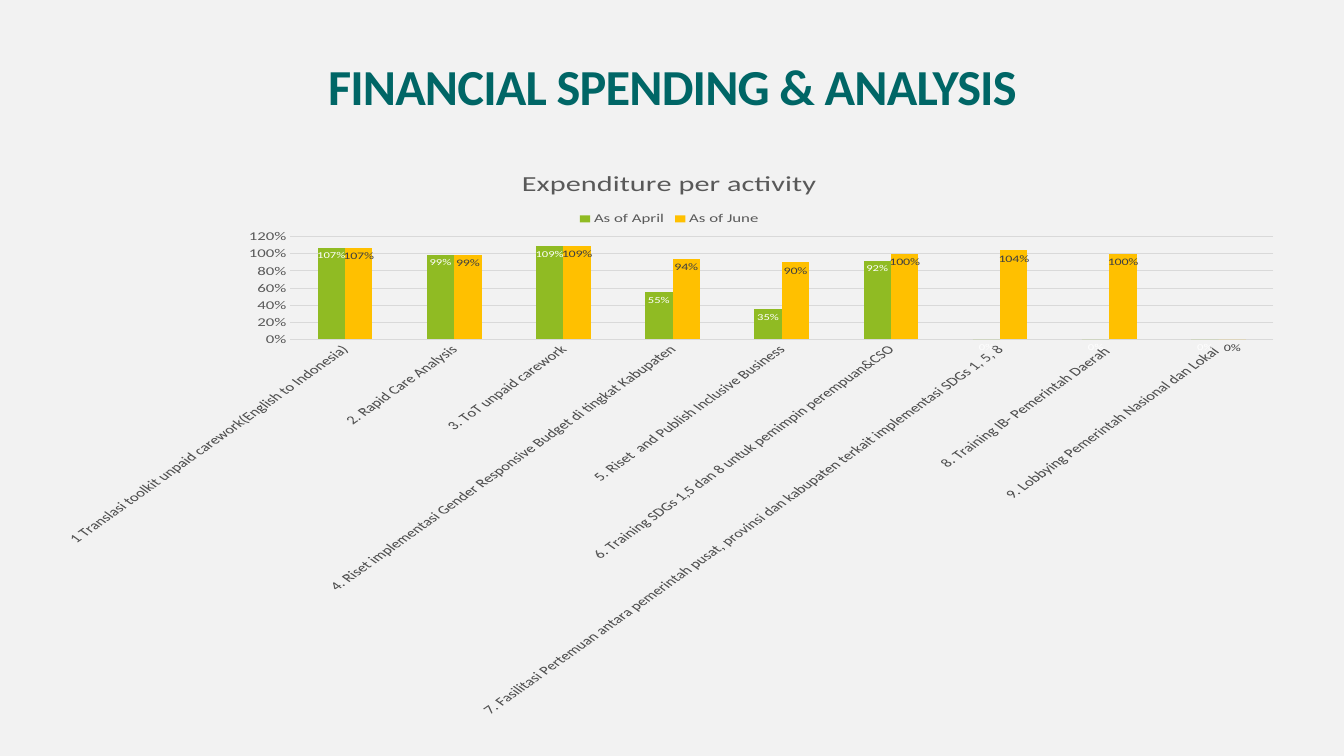
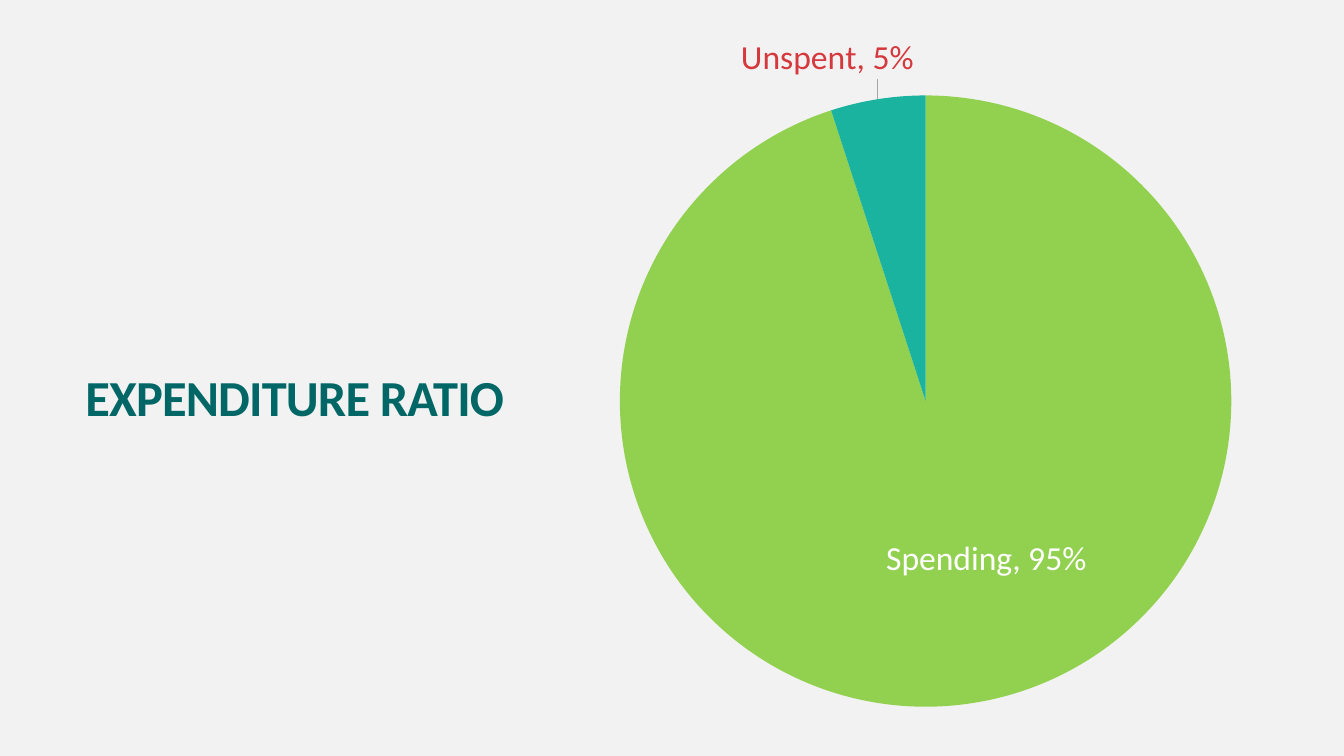
import pptx
import pptx.chart.data
import pptx.dml.color
import pptx.enum.chart
import pptx.enum.text
import pptx.oxml
import pptx.oxml.ns
import pptx.util
from lxml import etree

RGBColor = pptx.dml.color.RGBColor
ChartType = pptx.enum.chart.XL_CHART_TYPE
LabelPlace = pptx.enum.chart.XL_LABEL_POSITION
LegendPlace = pptx.enum.chart.XL_LEGEND_POSITION
TickMark = pptx.enum.chart.XL_TICK_MARK

PALE = RGBColor(0xF2, 0xF2, 0xF2)
TEAL = RGBColor(0x00, 0x66, 0x66)
GREY = RGBColor(0x59, 0x59, 0x59)
DARK = RGBColor(0x40, 0x40, 0x40)
RULE = RGBColor(0xD9, 0xD9, 0xD9)
LEADER = RGBColor(0xA6, 0xA6, 0xA6)
WHITE = RGBColor(0xFF, 0xFF, 0xFF)
BLACK = RGBColor(0x00, 0x00, 0x00)
RED = RGBColor(0xD5, 0x39, 0x3D)
GREEN = RGBColor(0x90, 0xBB, 0x23)
AMBER = RGBColor(0xFF, 0xC0, 0x00)
LIME = RGBColor(0x92, 0xD0, 0x50)
SEA = RGBColor(0x1A, 0xB3, 0x9F)

FONT = "Calibri"
WIDTH, HEIGHT = pptx.util.Inches(13.33), pptx.util.Inches(7.5)
TITLE_HEIGHT = 8.8
TITLE_LAYOUT = 5

ACTIVITIES = [
    "1 Translasi toolkit unpaid carework(English to Indonesia)",
    "2. Rapid Care Analysis",
    "3. ToT unpaid carework",
    "4. Riset implementasi Gender Responsive Budget di tingkat Kabupaten",
    "5. Riset  and Publish Inclusive Business",
    "6. Training SDGs 1,5 dan 8 untuk pemimpin perempuan&CSO",
    "7. Fasilitasi Pertemuan antara pemerintah pusat, provinsi dan kabupaten"
    " terkait implementasi SDGs 1, 5, 8",
    "8. Training IB- Pemerintah Daerah ",
    "9. Lobbying Pemerintah Nasional dan Lokal ",
]
SPENDING = {
    "As of April": [1.07, 0.99, 1.09, 0.55, 0.35, 0.92, 0, 0, 0],
    "As of June": [1.07, 0.99, 1.09, 0.94, 0.9, 1, 1.04, 1, 0],
}
SERIES_STYLES = [(GREEN, WHITE, 9), (AMBER, DARK, 10)]
RATIO = {"Spending": 0.95, "Unspend": 0.05}
SLICES = [
    ("Spending, 95%", LIME, WHITE, LabelPlace.CENTER, {"x": 0.03, "y": 0.01}),
    ("Unspent, 5%", SEA, RED, LabelPlace.OUTSIDE_END, {"x": 0.03, "y": -0.02}),
]
PIE_AREA = {"layoutTarget": "inner", "xMode": "edge", "yMode": "edge",
            "x": 0.24, "y": 0.08, "w": 0.5, "h": 0.84}


def area(left, top, width, height):
    """Turn percentages of the slide into a position and size."""
    shares = zip((left, top, width, height), (WIDTH, HEIGHT) * 2)
    return [round(share * full / 100) for share, full in shares]


def apply_format(target, values):
    """Set each attribute named in a dict of format values."""
    for name, value in values.items():
        setattr(target, name, value)


def style_font(font, size, color, bold=False):
    """Give a font its face, size, weight and colour."""
    apply_format(font, {"name": FONT, "size": pptx.util.Pt(size), "bold": bold})
    font.color.rgb = color


def paint(fill, color):
    """Fill with one solid colour."""
    fill.solid()
    fill.fore_color.rgb = color


def draw_rule(line):
    """Make a thin light line."""
    line.color.rgb = RULE
    line.width = pptx.util.Pt(0.75)


def set_layout(parent, index, values):
    """Place a chart part by hand."""
    name = pptx.oxml.ns.qn
    for old in parent.findall(name("c:layout")):
        parent.remove(old)
    layout = etree.Element(name("c:layout"))
    manual = etree.SubElement(layout, name("c:manualLayout"))
    for key, value in values.items():
        etree.SubElement(manual, name("c:" + key)).set("val", str(value))
    parent.insert(index, layout)


def add_leader_lines(labels):
    """Draw thin grey leaders from the labels to their slices."""
    namespaces = pptx.oxml.ns.nsdecls("c", "a")
    labels.append(pptx.oxml.parse_xml(
        f'<c:leaderLines {namespaces}><c:spPr><a:ln w="9525"><a:solidFill>'
        f'<a:srgbClr val="{LEADER}"/></a:solidFill></a:ln></c:spPr>'
        '</c:leaderLines>'))


def add_page(deck, title, left, top, width):
    """Add a page with its formatted title."""
    page = deck.slides.add_slide(deck.slide_layouts[TITLE_LAYOUT])
    box = page.shapes.title
    position = area(left, top, width, TITLE_HEIGHT)
    apply_format(box, dict(zip(("left", "top", "width", "height"), position)))
    apply_format(box.text_frame, {
        "word_wrap": True,
        "auto_size": pptx.enum.text.MSO_AUTO_SIZE.NONE,
        "vertical_anchor": pptx.enum.text.MSO_ANCHOR.MIDDLE,
    })
    para = box.text_frame.paragraphs[0]
    apply_format(para, {"alignment": pptx.enum.text.PP_ALIGN.CENTER,
                        "line_spacing": 0.9})
    span = para.add_run()
    span.text = title
    style_font(span.font, 36, TEAL, True)
    span.font._element.set("spc", "-60")
    return page


def add_chart(page, kind, categories, series, position):
    """Add a chart in the shared base font."""
    data = pptx.chart.data.CategoryChartData(number_format="0%")
    data.categories = categories
    for name, values in series.items():
        data.add_series(name, values)
    chart = page.shapes.add_chart(kind, *area(*position), data).chart
    style_font(chart.font, 10, BLACK)
    return chart


def style_axes(chart):
    """Format both axes of the column chart."""
    for axis in (chart.category_axis, chart.value_axis):
        apply_format(axis, {"major_tick_mark": TickMark.NONE,
                            "minor_tick_mark": TickMark.NONE})
        style_font(axis.tick_labels.font, 12, GREY)
    draw_rule(chart.category_axis.format.line)
    labels = chart.category_axis.tick_labels
    labels.font._element.getparent().getparent().getparent().bodyPr.set(
        "rot", "-2700000")
    value_axis = chart.value_axis
    apply_format(value_axis, {"minimum_scale": 0, "maximum_scale": 1.2,
                              "major_unit": 0.2})
    apply_format(value_axis.tick_labels, {"number_format": "0%",
                                          "number_format_is_linked": False})
    value_axis.format.line.fill.background()
    draw_rule(value_axis.major_gridlines.format.line)


def add_activity_chart(page):
    """Add the columns of expenditure per activity."""
    chart = add_chart(page, ChartType.COLUMN_CLUSTERED, ACTIVITIES, SPENDING,
                      (3, 20.13, 93.6, 74.67))
    chart.has_title = True
    para = chart.chart_title.text_frame.paragraphs[0]
    span = para.add_run()
    span.text = "Expenditure per activity"
    style_font(span.font, 21.6, GREY)
    chart.has_legend = True
    apply_format(chart.legend, {"position": LegendPlace.TOP,
                                "include_in_layout": False})
    style_font(chart.legend.font, 12, GREY)
    style_axes(chart)
    plot = chart.plots[0]
    apply_format(plot, {"gap_width": 199, "overlap": 0,
                        "vary_by_categories": False})
    for series, (color, label_color, size) in zip(plot.series, SERIES_STYLES):
        paint(series.format.fill, color)
        series.format.line.fill.background()
        series.invert_if_negative = False
        labels = series.data_labels
        apply_format(labels, {"show_value": True, "number_format": "0%",
                              "number_format_is_linked": False,
                              "position": LabelPlace.INSIDE_END})
        style_font(labels.font, size, label_color)


def add_ratio_chart(page):
    """Add the pie of spent and unspent shares."""
    chart = add_chart(page, ChartType.PIE, list(RATIO),
                      {"Series 1": list(RATIO.values())},
                      (24.1, 4.93, 91.37, 96.27))
    apply_format(chart, {"has_title": False, "has_legend": False})
    plot = chart.plots[0]
    plot.vary_by_categories = True
    series = plot.series[0]
    labels = series.data_labels
    apply_format(labels, {"show_value": True, "show_category_name": True,
                          "number_format": "0%",
                          "number_format_is_linked": False})
    style_font(labels.font, 24, RED, True)
    for index, (text, color, label_color, place, _) in enumerate(SLICES):
        point = series.points[index]
        paint(point.format.fill, color)
        label = point.data_label
        span = label.text_frame.paragraphs[0].add_run()
        span.text = text
        style_font(span.font, 24, label_color)
        label.position = place
    for label, (*_, shift) in zip(chart.element.xpath("//c:dLbl"), SLICES):
        set_layout(label, 1, shift)
    for flag in chart.element.xpath("//c:dLbl/c:showCatName"):
        flag.set("val", "1")
    add_leader_lines(chart.element.xpath("//c:ser/c:dLbls")[0])
    set_layout(chart.element.xpath("//c:plotArea")[0], 0, PIE_AREA)


def main():
    """Build and save the deck."""
    deck = pptx.Presentation()
    apply_format(deck, {"slide_width": WIDTH, "slide_height": HEIGHT})
    paint(deck.slide_master.background.fill, PALE)
    add_activity_chart(
        add_page(deck, "FINANCIAL SPENDING & ANALYSIS", 6.9, 7.4, 86.25))
    add_ratio_chart(add_page(deck, "EXPENDITURE RATIO", 2.8, 48.55, 38.25))
    deck.save("out.pptx")


if __name__ == "__main__":
    main()
